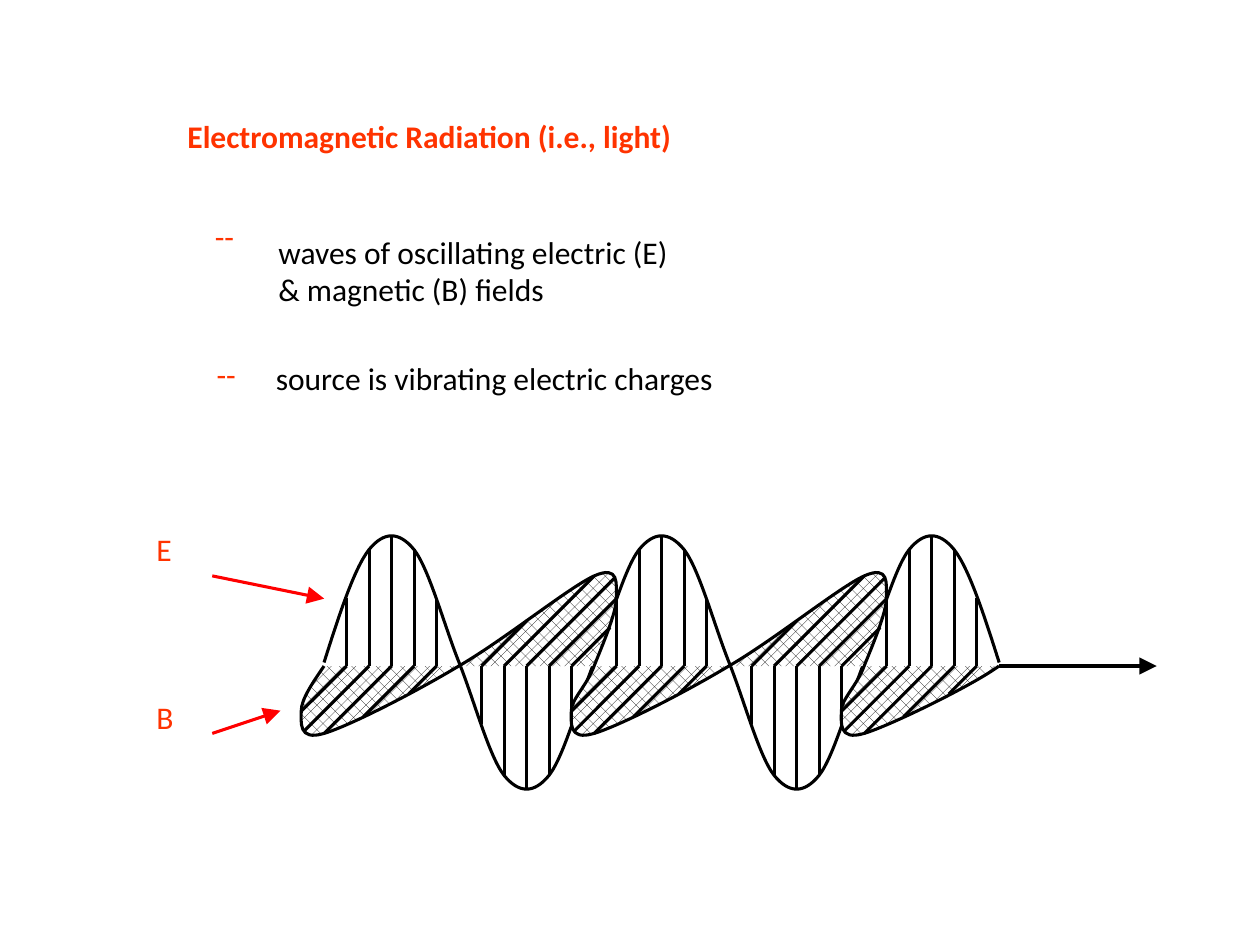
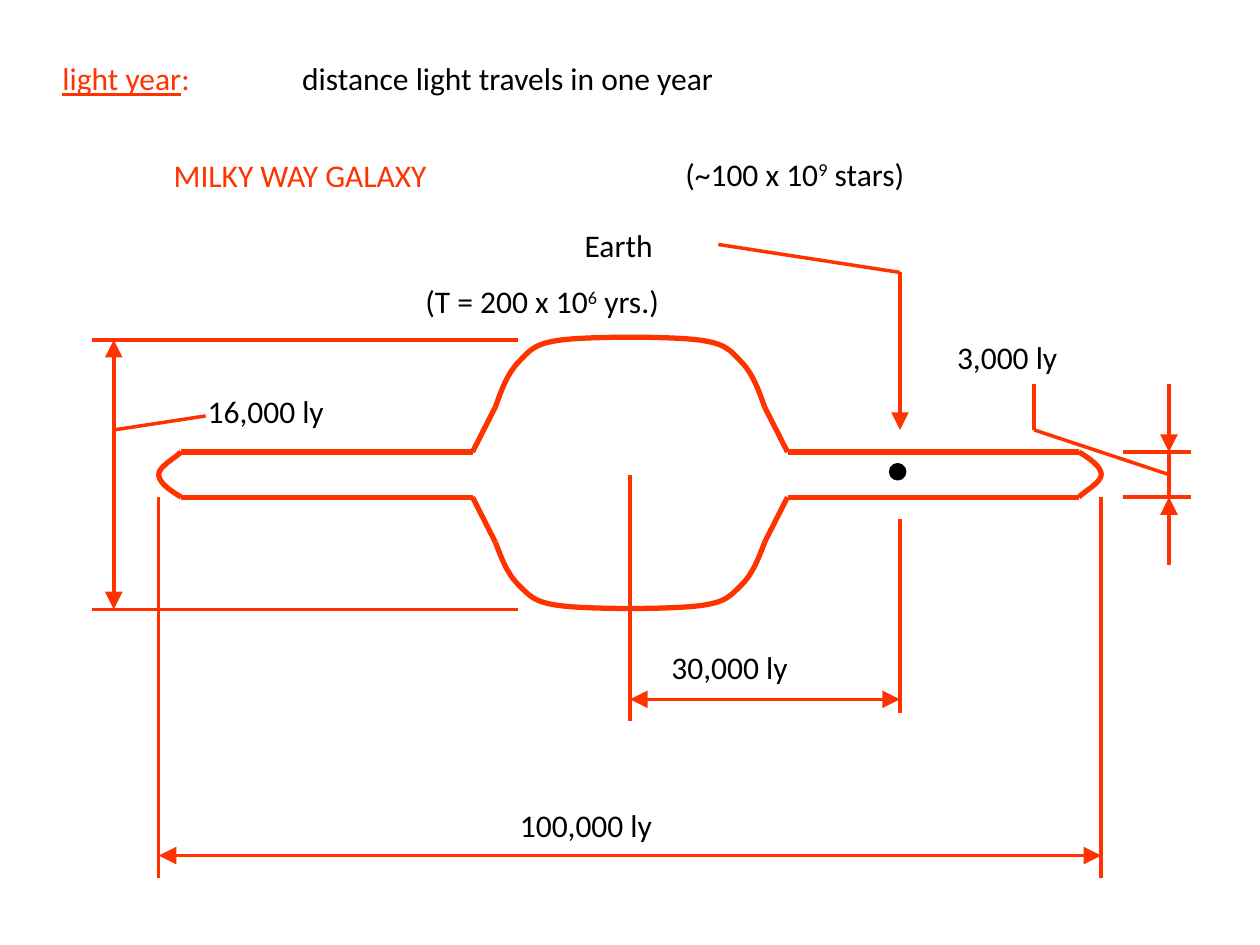
from lxml.etree import SubElement
from pptx import Presentation
from pptx.dml.color import RGBColor
from pptx.enum.dml import MSO_PATTERN
from pptx.enum.shapes import MSO_CONNECTOR, MSO_SHAPE
from pptx.enum.text import MSO_ANCHOR, MSO_AUTO_SIZE, PP_ALIGN
from pptx.oxml.ns import qn
from pptx.util import Pt

ORANGE = RGBColor(0xFF, 0x33, 0x00)
RED = RGBColor(0xFF, 0x00, 0x00)
BLACK = RGBColor(0x00, 0x00, 0x00)
WHITE = RGBColor(0xFF, 0xFF, 0xFF)
FONT = "Calibri"
TEXT_SIZE = 18
LABEL_HEIGHT = 41
TITLE_ONLY = 5

# Wave: one wavelength is 12 hatch steps
STEP = 12.86
WAVELENGTH = 12 * STEP
ELECTRIC_HALF = [21.5, 53.5, 64.5, 75, 75, 64.5, 53.5, 21.5, 0]
MAGNETIC_PERIOD = [
    (-4, 11), (-13, 19), (-13, 25.5), (-13, 32), (-15, 43), (0, 38.5),
    (15, 34), (52, 15), (77, 0), (103, -15), (140, -45), (WAVELENGTH, -51.5),
    (169, -58), (167, -47), (167, -38.5), (167, -30), (158.5, -10.5), (WAVELENGTH, 0)]
# Electric height and magnetic reach of each hatch line
CREST_HATCH = [(39, 26), (67, 37), (75, 38.5), (67, 29), (39, 16)]
TROUGH_HATCH = [(33, 26), (62, 51.5), (71, 50), (62, 38.5), (34, 22)]

# Galaxy, measured from its centre
HALF_LENGTH = 269.3
HALF_DISC = 12.9
HALF_BULGE = 77
SHOULDER = 38.5
DISC_END = 256.5
DISC_START = 90
EARTH_X = 154.3
BULGE_LEFT = [(-77, SHOULDER), (-73.5, 48), (-70.5, 57), (-64, 64),
              (-57.5, 70.5), (-55.5, 75), (-38.5, 77), (-22, 79)]
TIP = [(-DISC_END, HALF_DISC), (-263, 9), (-HALF_LENGTH, 4.5), (-HALF_LENGTH, 0),
       (-HALF_LENGTH, -4.5), (-260.5, -9), (-DISC_END, -HALF_DISC)]


def write_text(box, *lines, color=BLACK, bold=False, anchor=MSO_ANCHOR.MIDDLE):
    """Each line is a string or a list of (text, style) spans."""
    frame = box.text_frame
    frame.word_wrap = True
    frame.auto_size = MSO_AUTO_SIZE.NONE
    frame.vertical_anchor = anchor
    for number, line in enumerate(lines):
        para = frame.add_paragraph() if number else frame.paragraphs[0]
        para.alignment = PP_ALIGN.LEFT
        for text, style in [(line, "")] if isinstance(line, str) else line:
            span = para.add_run()
            span.text = text
            span.font.name = FONT
            span.font.size = Pt(TEXT_SIZE)
            span.font.bold = bold
            span.font.color.rgb = color
            if style == "underline":
                span.font.underline = True
            elif style == "superscript":
                span.font._element.set("baseline", "30000")


def add_label(page, left, top, width, *lines, height=LABEL_HEIGHT, **style):
    box = page.shapes.add_textbox(Pt(left), Pt(top), Pt(width), Pt(height))
    write_text(box, *lines, **style)


def set_title(page, left, top, width, text, **style):
    title = page.shapes.title
    title.left, title.top = Pt(left), Pt(top)
    title.width, title.height = Pt(width), Pt(LABEL_HEIGHT)
    write_text(title, text, color=ORANGE, **style)


class Sketch:
    """Draws lines and curves relative to an origin on the page."""

    def __init__(self, page, left, top, color, width):
        self.page, self.left, self.top = page, left, top
        self.color, self.width = color, width

    def place(self, point):
        return Pt(self.left + point[0]), Pt(self.top + point[1])

    def line(self, start, end, arrow=False):
        connector = self.page.shapes.add_connector(
            MSO_CONNECTOR.STRAIGHT, *self.place(start), *self.place(end))
        connector.line.color.rgb = self.color
        connector.line.width = Pt(self.width)
        properties = connector._element.spPr
        if arrow:
            SubElement(properties.find(qn("a:ln")), qn("a:tailEnd"),
                       type="triangle", w="lg", len="lg")
        SubElement(properties, qn("a:effectLst"))

    def arrows(self, start, *ends):
        for end in ends:
            self.line(start, end, arrow=True)

    def curve(self, points):
        """Chained cubic curves: knot, control, control, knot..."""
        start, *others = [self.place(point) for point in points]
        builder = self.page.shapes.build_freeform(*start)
        builder.add_line_segments(others, close=False)
        shape = builder.convert_to_shape()
        bend_segments(shape)
        shape.shadow.inherit = False
        shape.fill.background()
        shape.line.color.rgb = self.color
        shape.line.width = Pt(self.width)
        return shape


def bend_segments(shape):
    """Turn every three straight segments into one cubic curve."""
    segments = list(shape._element.iter(qn("a:lnTo")))
    for first in range(0, len(segments), 3):
        trio = segments[first:first + 3]
        outline = trio[0].getparent()
        cubic = SubElement(outline, qn("a:cubicBezTo"))
        for segment in trio:
            cubic.append(segment[0])
            outline.remove(segment)


def draw_wave(page, left, axis):
    sketch = Sketch(page, left, axis, BLACK, 1.75)

    # Electric field: five half waves, slightly above the axis
    heights = [0] + [sign * height for sign in (-1, 1, -1, 1, -1) for height in ELECTRIC_HALF]
    heights[1] = heights[-2] = -27
    sketch.curve([(number * STEP * 2 / 3, height - 2) for number, height in enumerate(heights)])

    # Magnetic field: two and a half wavelengths with softer ends
    points = [(0, 0)] + [(x + period * WAVELENGTH, y)
                         for period in range(3) for x, y in MAGNETIC_PERIOD]
    points = points[:-9]
    points[1] = (-6.5, 9.5)
    points[-2] = (2 * WAVELENGTH + 62, 11)
    fill = sketch.curve(points).fill
    fill.patterned()
    fill.pattern = MSO_PATTERN.PERCENT_30
    fill.fore_color.rgb, fill.back_color.rgb = BLACK, WHITE

    # Hatching of crests and troughs
    for half in range(5):
        hatch, sign = (TROUGH_HATCH, 1) if half % 2 else (CREST_HATCH, -1)
        for number, (height, reach) in enumerate(hatch, start=1):
            x = (half * 6 + number) * STEP
            for tip in ((x, sign * height), (x + sign * reach, -sign * reach)):
                ends = [(x, 0), tip]
                sketch.line(*ends[::-sign])

    # Direction of travel
    sketch.arrows((30 * STEP, 0), (30 * STEP + 90, 0))


def draw_field_pointers(page, left, top):
    sketch = Sketch(page, left, top, RED, 1.75)
    for name, label_top, start, end in (
            ("E", 0, (39, 29.5), (103, 42.5)), ("B", 96, (39, 119.5), (78, 106.5))):
        sketch.arrows(start, end)
        add_label(page, left, top + label_top, 40, name, color=ORANGE, anchor=MSO_ANCHOR.TOP)


def draw_galaxy(page, left, top):
    sketch = Sketch(page, left, top, ORANGE, 3)
    bulge = BULGE_LEFT + [(-x, y) for x, y in reversed(BULGE_LEFT)]
    # The lower bulge is a little flatter
    for side, stretch in ((-1, 1), (1, 0.95)):
        sketch.curve([(x, side * (SHOULDER + stretch * (y - SHOULDER))) for x, y in bulge])
        sketch.curve([(-side * x, -side * y) for x, y in TIP])
        for level in (-1, 1):
            corner = (side * DISC_START, level * HALF_DISC)
            sketch.line((side * 77, level * SHOULDER), corner)
            sketch.line(corner, (side * DISC_END, level * HALF_DISC))


def draw_dimensions(page, left, top):
    sketch = Sketch(page, left, top, ORANGE, 2)

    # Distance from the centre to Earth
    sketch.line((0, 141), (0, 0))
    sketch.line((EARTH_X, 136), (EARTH_X, 25.5))
    sketch.arrows((64, 128.4), (0, 128.4), (EARTH_X, 128.4))

    # Bulge height, disc thickness and overall length
    for side in (-1, 1):
        sketch.line((-307.5, side * HALF_BULGE), (-64, side * HALF_BULGE))
        sketch.line((282, side * HALF_DISC), (320.5, side * HALF_DISC))
        sketch.arrows((308, side * 51.5), (308, side * HALF_DISC))
        sketch.line((side * HALF_LENGTH, 230.5), (side * HALF_LENGTH, HALF_DISC))
    sketch.arrows((-295, -HALF_DISC), (-295, HALF_BULGE), (-295, -HALF_BULGE))
    sketch.line((308, HALF_DISC), (308, -HALF_DISC))
    sketch.arrows((-26, 217.7), (-HALF_LENGTH, 217.7), (HALF_LENGTH, 217.7))

    # Leaders from the labels
    sketch.line((308, 0), (231, -25.5))
    sketch.line((231, -25.5), (231, -51.5))
    sketch.line((-242.5, -33.5), (-295, -25.5))
    sketch.line((EARTH_X, -115.5), (50.5, -131.5))
    sketch.arrows((EARTH_X, -115.5), (EARTH_X, -25.5))


def draw_earth(page, left, top, size=8.8):
    dot = page.shapes.add_shape(MSO_SHAPE.OVAL, Pt(left), Pt(top), Pt(size), Pt(size))
    dot.shadow.inherit = False
    dot.fill.solid()
    dot.fill.fore_color.rgb = BLACK
    dot.line.color.rgb = BLACK
    dot.line.width = Pt(1.25)


def build_radiation_page(page):
    set_title(page, 99.9, 57.3, 515, "Electromagnetic Radiation (i.e., light)", bold=True)
    add_label(page, 115.7, 114.5, 41, "--", color=ORANGE)
    add_label(page, 116.7, 193.4, 41, "--", color=ORANGE)
    draw_wave(page, 185.2, 380.6)
    draw_field_pointers(page, 82.3, 299.6)
    add_label(page, 152, 117.5, 398, "waves of oscillating electric (E)",
              "& magnetic (B) fields", height=74)
    add_label(page, 150.5, 195.6, 453, "source is vibrating electric charges")


def build_galaxy_page(page):
    set_title(page, 92, 79.2, 289, "MILKY WAY GALAXY")
    add_label(page, 28.6, 24.2, 144, [("light year", "underline"), (":", "")], color=ORANGE)
    add_label(page, 165.6, 24.2, 423, "distance light travels in one year")
    draw_dimensions(page, 360, 271.2)
    draw_galaxy(page, 360, 271.2)
    for text, left, top, width in (
            ("Earth", 327, 119.5, 81), ("16,000 ly", 111.6, 214.2, 136),
            ("3,000 ly", 539.8, 183.6, 120), ("30,000 ly", 376.6, 360.4, 136),
            ("100,000 ly", 290, 450.7, 152)):
        add_label(page, left, top, width, text)
    add_label(page, 384.6, 78.8, 236,
              [("(~100 x 10", ""), ("9", "superscript"), (" stars)", "")])
    draw_earth(page, 508.6, 265.2)
    add_label(page, 236, 151.7, 261,
              [("(T = 200 x 10", ""), ("6", "superscript"), (" yrs.)", "")])


def main():
    deck = Presentation()
    deck.slide_width, deck.slide_height = Pt(720), Pt(540)
    for build in (build_radiation_page, build_galaxy_page):
        build(deck.slides.add_slide(deck.slide_layouts[TITLE_ONLY]))
    deck.save("out.pptx")


if __name__ == "__main__":
    main()
